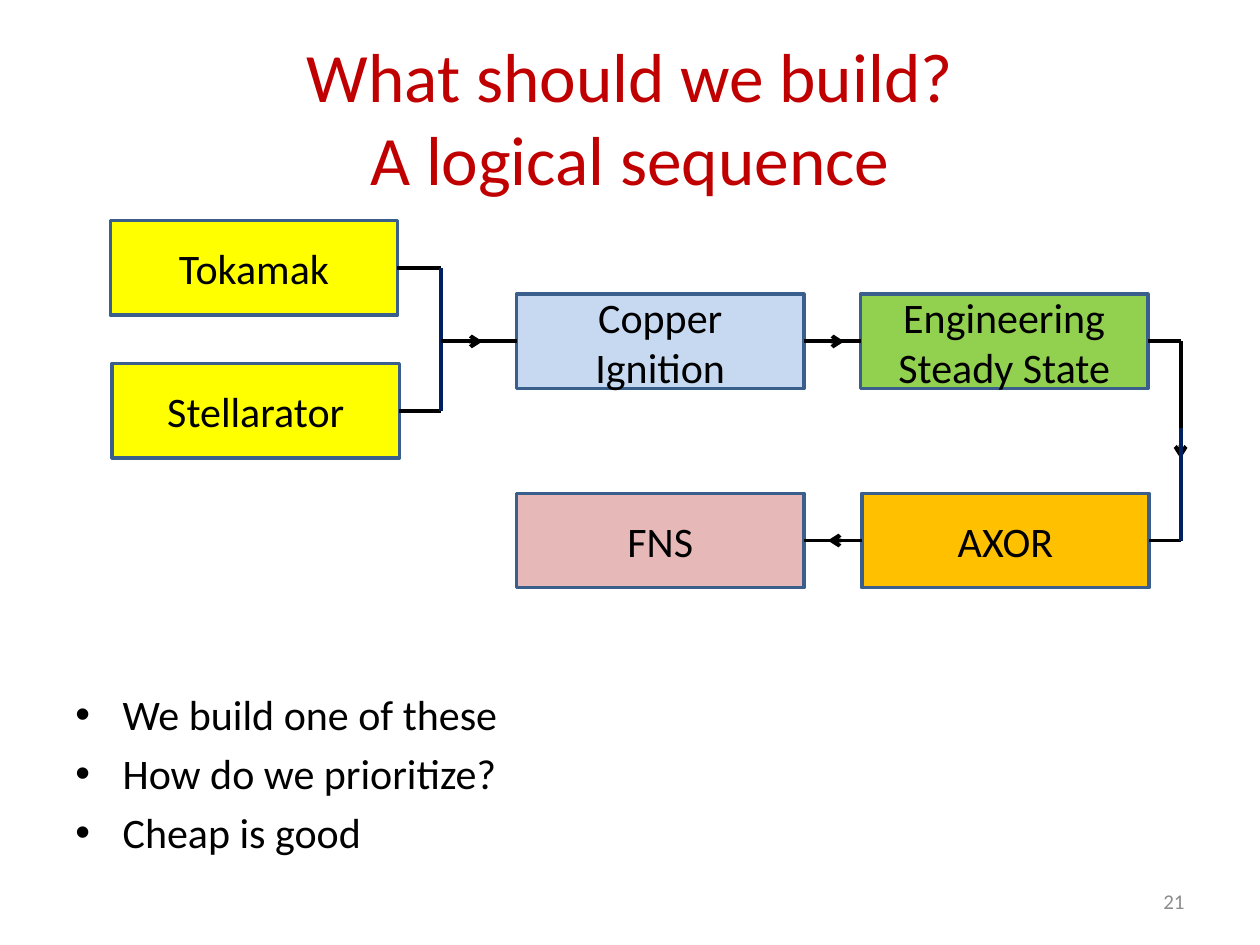
from pptx import Presentation
from pptx.dml.color import RGBColor as Rgb
from pptx.enum.shapes import MSO_CONNECTOR as Line, MSO_SHAPE as Shape
from pptx.enum.text import MSO_ANCHOR as Anchor, PP_ALIGN as Align
from pptx.oxml.ns import qn
from pptx.util import Inches, Pt
from lxml.etree import SubElement as Sub

TITLE = "What should we build?\vA logical sequence"
POINTS = ["We build one of these", "How do we prioritize?", "Cheap is good"]
NUMBER = "21"
COLS, ROWS = 100, 75
WIDE, HIGH = 22.8, 7.5
BLACK, NAVY = "000000", "002060"
TOP, MID, LOW, BASE = 21.25, 27.1, 32.6, 42.9
BOXES = {
    "Tokamak": (8.75, TOP, "FFFF00"),
    "Stellarator": (8.9, LOW, "FFFF00"),
    "Engineering\nSteady State": (68.3, MID, "92D050"),
    "Copper Ignition": (41, MID, "C6D9F1"),
    "FNS": (41, BASE, "E6B9B8"),
    "AXOR": (68.4, BASE, "FFC000"),
}
TOK, STELL, ENG, COP, FNS, AXOR = BOXES
LEFT, RIGHT = 1, 3
FORK, BEND = 35, 93.7
LINKS = [
    ((TOK, RIGHT), (FORK, TOP), BLACK, False),
    ((STELL, RIGHT), (FORK, LOW), BLACK, False),
    ((FORK, TOP), (FORK, LOW), NAVY, False),
    ((FORK, MID), (38.3, MID), BLACK, True),
    ((35.8, MID), (COP, LEFT), BLACK, False),
    ((COP, RIGHT), (67, MID), BLACK, True),
    ((64.5, MID), (ENG, LEFT), BLACK, False),
    ((AXOR, RIGHT), (BEND, BASE), BLACK, False),
    ((ENG, RIGHT), (BEND, MID), BLACK, False),
    ((BEND, MID), (BEND, 36.4), BLACK, True),
    ((BEND, 34), (BEND, BASE), NAVY, False),
    ((FNS, RIGHT), (67.7, BASE), BLACK, False),
    ((AXOR, LEFT), (65.7, BASE), BLACK, True),
]

deck = Presentation()
deck.slide_width, deck.slide_height = Inches(10), Inches(7.5)
slide = deck.slides.add_slide(deck.slide_layouts[5])
shapes = slide.shapes


def hue(code):
    return Rgb.from_string(code)


def x(col):
    return round(deck.slide_width * col / COLS)


def y(row):
    return round(deck.slide_height * row / ROWS)


def area(col, row, cols, rows):
    return x(col), y(row), x(cols), y(rows)


def write(shape, text, size=24, color=BLACK, align=Align.CENTER,
          anchor=Anchor.MIDDLE, gap=0, bullet=None):
    frame = shape.text_frame
    frame.word_wrap = True
    frame.vertical_anchor = anchor
    frame.text = text
    for para in frame.paragraphs:
        para.alignment = align
        para.space_before = Pt(gap)
        for run in para.runs:
            font = run.font
            font.name, font.size = "Calibri", Pt(size)
            font.color.rgb = hue(color)
        if bullet:
            props = para._p.get_or_add_pPr()
            props.set("marL", str(x(3.75)))
            props.set("indent", str(-x(3.75)))
            Sub(props, qn("a:buFont")).set("typeface", "Arial")
            Sub(props, qn("a:buChar")).set("char", bullet)


def spot(end):
    if end[0] not in BOXES:
        return x(end[0]), y(end[1])
    col, row, _ = BOXES[end[0]]
    return x(col + WIDE * (end[1] == RIGHT)), y(row)


def link(start, stop, color, arrow):
    line = shapes.add_connector(Line.STRAIGHT, *spot(start), *spot(stop))
    if start[0] in BOXES:
        line.begin_connect(rects[start[0]], start[1])
    if stop[0] in BOXES:
        line.end_connect(rects[stop[0]], stop[1])
    line.line.color.rgb = hue(color)
    line.line.width = Pt(2.25)
    props = line._element.spPr
    if arrow:
        Sub(props.find(qn("a:ln")), qn("a:tailEnd")).set("type", "arrow")
    Sub(props, qn("a:effectLst"))


title = shapes.title
title.left, title.top, title.width, title.height = area(5, 3, 90, 12.5)
write(title, TITLE, size=39.6, color="C00000")

body = shapes.add_textbox(*area(5, 53, 90, 15.5))
write(body, "\n".join(POINTS), align=Align.LEFT, anchor=Anchor.BOTTOM,
      gap=4.8, bullet="•")

page = shapes.add_textbox(*area(71.7, 69.5, 23.3, 4))
write(page, NUMBER, size=12, color="8C8C8C", align=Align.RIGHT)

rects = {}
for name, (col, row, fill) in BOXES.items():
    place = area(col, row - HIGH / 2, WIDE, HIGH)
    rect = shapes.add_shape(Shape.RECTANGLE, *place)
    rect.shadow.inherit = False
    rect.fill.solid()
    rect.fill.fore_color.rgb = hue(fill)
    rect.line.color.rgb = hue("3A5F8C")
    rect.line.width = Pt(2)
    write(rect, name)
    rects[name] = rect

for item in LINKS:
    link(*item)

deck.save("out.pptx")
